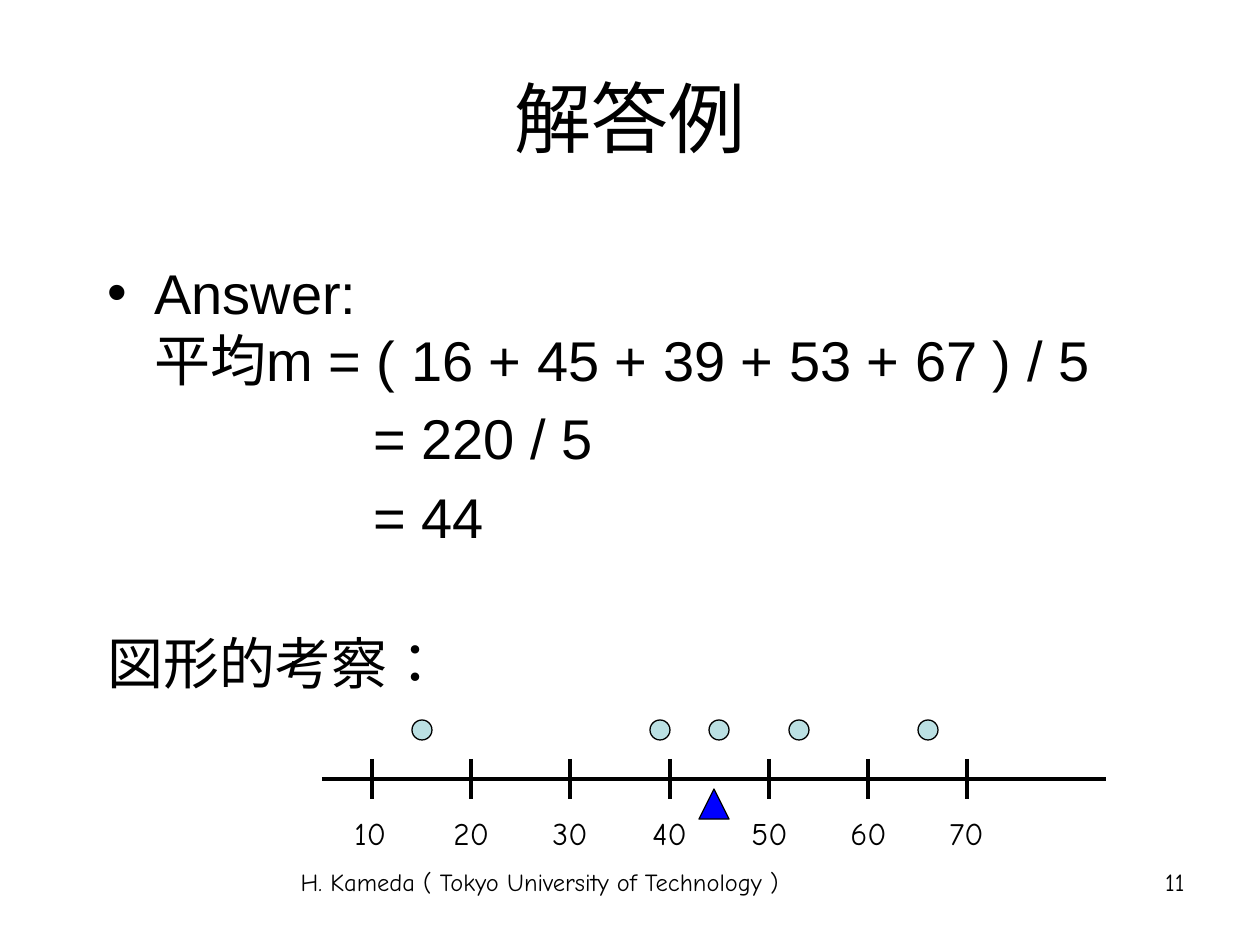
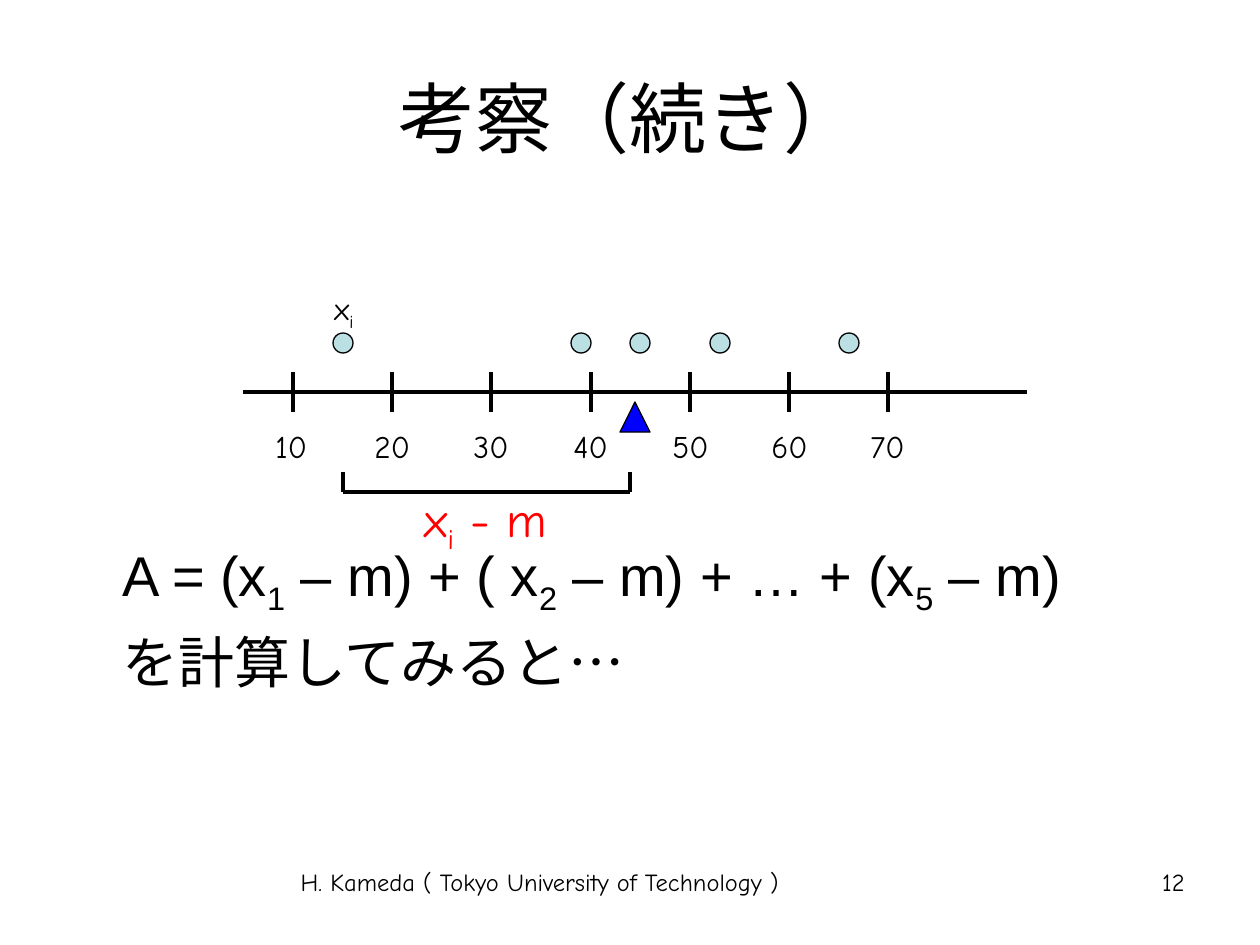
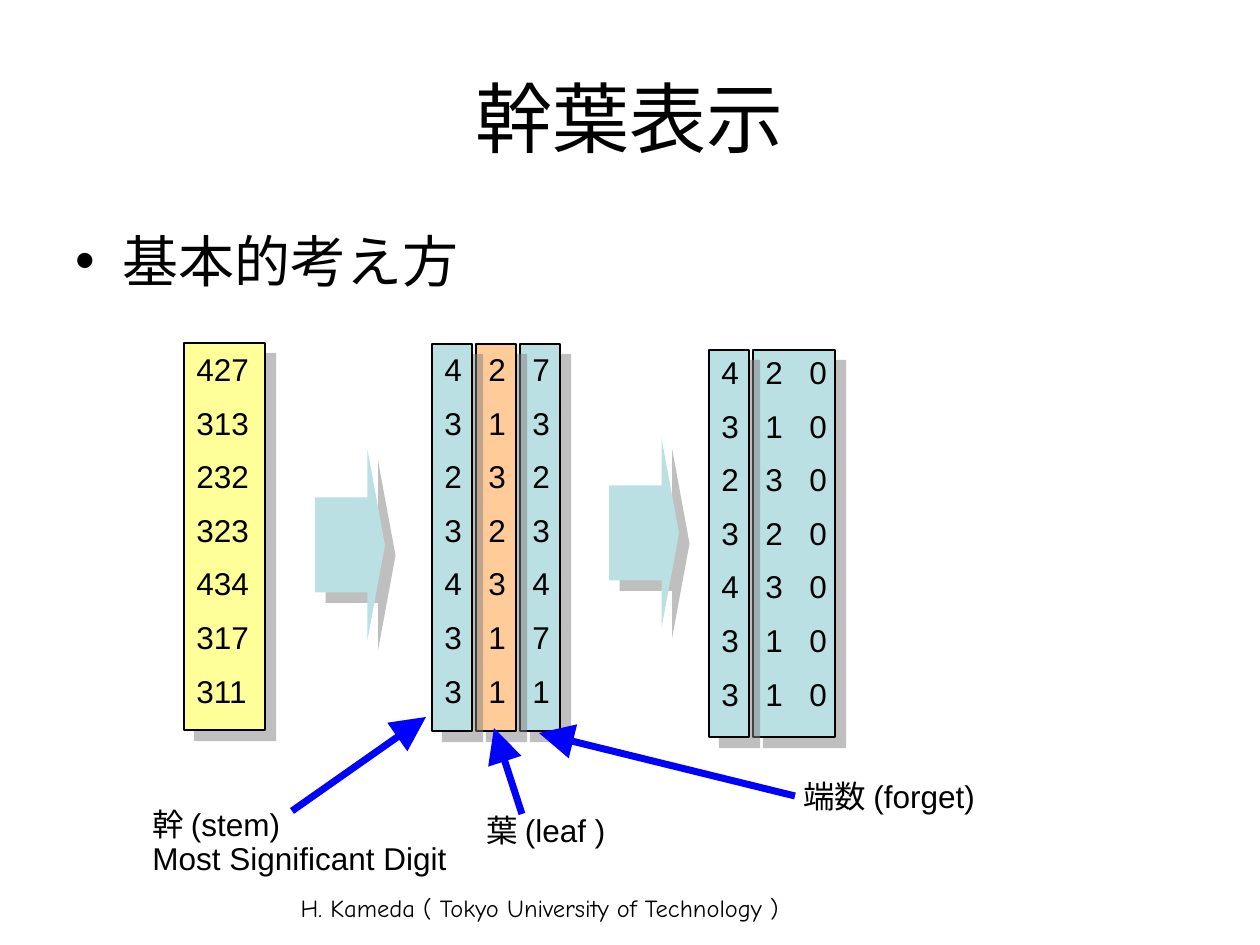
from dataclasses import dataclass
from typing import NamedTuple

from lxml import etree
from pptx import Presentation
from pptx.dml.color import RGBColor
from pptx.enum import lang, shapes, text
from pptx.oxml.ns import qn
from pptx.util import Emu, Pt

PX = 914400 / 126


def px(length: float) -> Emu:
    return Emu(round(length * PX))


@dataclass(frozen=True)
class Theme:
    black: str = "000000"
    blue: str = "0000FF"
    red: str = "FF0000"
    aqua: str = "BBE0E3"
    peach: str = "FFCC99"
    yellow: str = "FFFF99"
    shade: str = "808080"
    main_font: str = "Arial"
    note_font: str = "Comic Neue"
    title_size: int = 44
    body_size: int = 32
    formula_size: int = 28
    label_size: int = 18
    footer_size: int = 14
    body_gap: float = 6.4
    label_gap: float = 9
    hairline: float = 0
    axis_width: float = 2
    arrow_width: float = 4


THEME = Theme()
BODY = dict(size=THEME.body_size, before=THEME.body_gap)
HANG = 47
LABEL = dict(size=THEME.label_size, before=THEME.label_gap)
NOTE = dict(LABEL, font=THEME.note_font)
FOOTER = dict(size=THEME.footer_size, font=THEME.note_font)


class Frame(NamedTuple):
    left: int
    top: int
    width: int
    height: int


class Column(NamedTuple):
    frame: Frame
    fill: str


class Pointer(NamedTuple):
    start: tuple[int, int]
    end: tuple[int, int]


class Digits(NamedTuple):
    left: int
    top: int
    rows: list[str]


# Text
def add_box(page, frame: Frame, anchor=text.MSO_ANCHOR.TOP):
    box = page.shapes.add_textbox(*map(px, frame))
    box.text_frame.word_wrap = True
    box.text_frame.vertical_anchor = anchor
    return box


def write(box, content: str, *, size: float, font: str = THEME.main_font,
          color: str = THEME.black, align=text.PP_ALIGN.LEFT, before: float = 0,
          spacing: float | None = None, margin: int = 0, bullet: bool = False) -> None:
    """Add one paragraph; text between ~ marks is subscript, \\n breaks the line."""
    first = box.text_frame.paragraphs[0]
    is_first = not first.runs
    para = first if is_first else box.text_frame.add_paragraph()
    para.alignment = align
    para.line_spacing = spacing
    if not is_first:
        para.space_before = Pt(before)
    props = para._p.get_or_add_pPr()
    props.set("marL", str(px(margin)))
    props.set("indent", str(px(-margin if bullet else 0)))
    if bullet:
        etree.SubElement(props, qn("a:buFont"), typeface=font)
        etree.SubElement(props, qn("a:buChar"), char="•")
    for row, line in enumerate(content.split("\n")):
        if row:
            para.add_line_break()
        for index, piece in enumerate(line.split("~")):
            if not piece:
                continue
            span = para.add_run()
            span.text = piece
            span.font.size = Pt(size)
            span.font.name = font
            span.font.language_id = lang.MSO_LANGUAGE_ID.JAPANESE
            span.font.color.rgb = RGBColor.from_string(color)
            if index % 2:
                span._r.get_or_add_rPr().set("baseline", "-25000")


def add_text(page, frame: Frame, *contents: str,
             anchor=text.MSO_ANCHOR.TOP, **style) -> None:
    box = add_box(page, frame, anchor)
    for content in contents:
        write(box, content, **style)


# Shapes and lines
def add_figure(page, kind, frame: Frame, fill: str, *, outline: bool = True,
               shadow: bool = False):
    figure = page.shapes.add_shape(kind, *map(px, frame))
    figure.fill.solid()
    figure.fill.fore_color.rgb = RGBColor.from_string(fill)
    if outline:
        figure.line.color.rgb = RGBColor.from_string(THEME.black)
        figure.line.width = Pt(THEME.hairline)
    else:
        figure.line.fill.background()
    figure.shadow.inherit = False
    if shadow:
        effects = figure._element.spPr.find(qn("a:effectLst"))
        outer = etree.SubElement(effects, qn("a:outerShdw"), blurRad="0",
                                 dist=str(Pt(8.5)), dir="2700000",
                                 algn="ctr", rotWithShape="0")
        tint = etree.SubElement(outer, qn("a:srgbClr"), val=THEME.shade)
        etree.SubElement(tint, qn("a:alpha"), val="50000")
    return figure


def add_line(page, start: tuple[int, int], end: tuple[int, int], *,
             color: str = THEME.black, width: float = THEME.hairline,
             arrow: bool = False) -> None:
    line = page.shapes.add_connector(shapes.MSO_CONNECTOR.STRAIGHT,
                                     *map(px, (*start, *end)))
    line.line.color.rgb = RGBColor.from_string(color)
    line.line.width = Pt(width)
    props = line._element.spPr
    if arrow:
        etree.SubElement(props.find(qn("a:ln")), qn("a:tailEnd"),
                         type="triangle", w="lg", len="lg")
    etree.SubElement(props, qn("a:effectLst"))


# Parts shared by the slides
def add_page(deck, title: str, number: str = "", footer_top: int = 861):
    page = deck.slides.add_slide(deck.slide_layouts[6])
    add_text(page, Frame(63, 38, 1134, 158), title, size=THEME.title_size,
             align=text.PP_ALIGN.CENTER, anchor=text.MSO_ANCHOR.MIDDLE)
    add_text(page, Frame(251, footer_top, 578, 66),
             "H. Kameda ( Tokyo University of Technology )",
             align=text.PP_ALIGN.CENTER, **FOOTER)
    if number:
        add_text(page, Frame(903, footer_top, 294, 66), number,
                 align=text.PP_ALIGN.RIGHT, **FOOTER)
    return page


@dataclass(frozen=True)
class NumberLine:
    left: int
    axis: int
    points: tuple[int, ...] = (15, 39, 45, 53, 66)
    balance: float = 44.5

    def at(self, value: float) -> int:
        return round(self.left + 50 + (value - 10) * 9.92)

    def draw(self, page) -> None:
        add_line(page, (self.left, self.axis), (self.left + 784, self.axis),
                 width=THEME.axis_width)
        for value in range(10, 80, 10):
            x = self.at(value)
            add_line(page, (x, self.axis - 20), (x, self.axis + 20))
            add_text(page, Frame(x - 30, self.axis + 29, 69, 50), str(value), **NOTE)
        for value in self.points:
            add_figure(page, shapes.MSO_SHAPE.OVAL,
                       Frame(self.at(value) - 10, self.axis - 59, 20, 20), THEME.aqua)
        add_figure(page, shapes.MSO_SHAPE.ISOSCELES_TRIANGLE,
                   Frame(self.at(self.balance) - 15, self.axis + 10, 30, 30), THEME.blue)


# Slides
def build_answer(deck) -> None:
    page = add_page(deck, "解答例", "11")
    box = add_box(page, Frame(95, 252, 1061, 597))
    write(box, "Answer:\n平均m = ( 16 + 45 + 39 + 53 + 67 ) / 5",
          margin=HANG, bullet=True, **BODY)
    for step in ("= 220 / 5", "= 44"):
        write(box, step, margin=266, **BODY)
    write(box, "図形的考察：", size=THEME.body_size, before=45)
    NumberLine(322, 779).draw(page)


def build_deviation(deck) -> None:
    page = add_page(deck, "考察（続き）", "12")
    add_text(page, Frame(63, 534, 1134, 309),
             "A = (x~1~ – m) + ( x~2~ – m) + … + (x~5~ – m)",
             "を計算してみると…", margin=HANG, **BODY)
    scale = NumberLine(243, 392)
    scale.draw(page)

    # Bracket from the first point to the mean
    first, mean, base = scale.at(15), scale.at(44), scale.axis + 100
    add_line(page, (first, base), (mean, base))
    for x in (first, mean):
        add_line(page, (x, base), (x, base - 20))
    add_text(page, Frame(412, 482, 169, 72), "x~i~ - m", size=THEME.formula_size,
             font=THEME.note_font, color=THEME.red)
    add_text(page, Frame(322, 283, 69, 50), "x~i~", **NOTE)


def build_stem_leaf(deck) -> None:
    page = add_page(deck, "幹葉表示", footer_top=887)
    add_text(page, Frame(63, 220, 1134, 624), "基本的考え方",
             margin=HANG, bullet=True, **BODY)

    # Columns run right to left so each shadow falls on its neighbour
    columns = [
        Column(Frame(753, 350, 82, 387), THEME.aqua),
        Column(Frame(709, 350, 40, 387), THEME.aqua),
        Column(Frame(520, 344, 40, 387), THEME.aqua),
        Column(Frame(476, 344, 40, 387), THEME.peach),
        Column(Frame(432, 344, 40, 387), THEME.aqua),
        Column(Frame(184, 343, 81, 387), THEME.yellow),
    ]
    for column in columns:
        add_figure(page, shapes.MSO_SHAPE.RECTANGLE, column.frame, column.fill,
                   shadow=True)

    # Values whole, split into digits, and with the last digit dropped
    values = ["427", "313", "232", "323", "434", "317", "311"]
    add_text(page, Frame(184, 344, 80, 392), *values, **LABEL)
    tables = [
        Digits(432, 344, values),
        Digits(709, 347, [value[:2] + "0" for value in values]),
    ]
    for table in tables:
        for place, digits in enumerate(zip(*table.rows)):
            add_text(page, Frame(table.left + 44 * place, table.top, 60, 392),
                     *digits, **LABEL)

    for left, top in ((315, 450), (609, 438)):
        arrow = add_figure(page, shapes.MSO_SHAPE.RIGHT_ARROW,
                           Frame(left, top, 70, 190), THEME.aqua,
                           outline=False, shadow=True)
        arrow.adjustments[0] = 0.5
        arrow.adjustments[1] = 0.25

    # Captions and their pointers
    add_text(page, Frame(140, 815, 420, 69), "幹 (stem)", "Most Significant Digit",
             spacing=0.5, **LABEL)
    add_text(page, Frame(474, 805, 152, 50), "葉 (leaf )", **LABEL)
    add_text(page, Frame(791, 771, 222, 50), "端数 (forget)", **LABEL)
    pointers = [
        Pointer((292, 811), (426, 717)),
        Pointer((522, 814), (494, 728)),
        Pointer((795, 796), (539, 733)),
    ]
    for pointer in pointers:
        add_line(page, pointer.start, pointer.end, color=THEME.blue,
                 width=THEME.arrow_width, arrow=True)


def main() -> None:
    deck = Presentation()
    deck.slide_width, deck.slide_height = px(1260), px(945)
    build_answer(deck)
    build_deviation(deck)
    build_stem_leaf(deck)
    deck.save("out.pptx")


if __name__ == "__main__":
    main()
